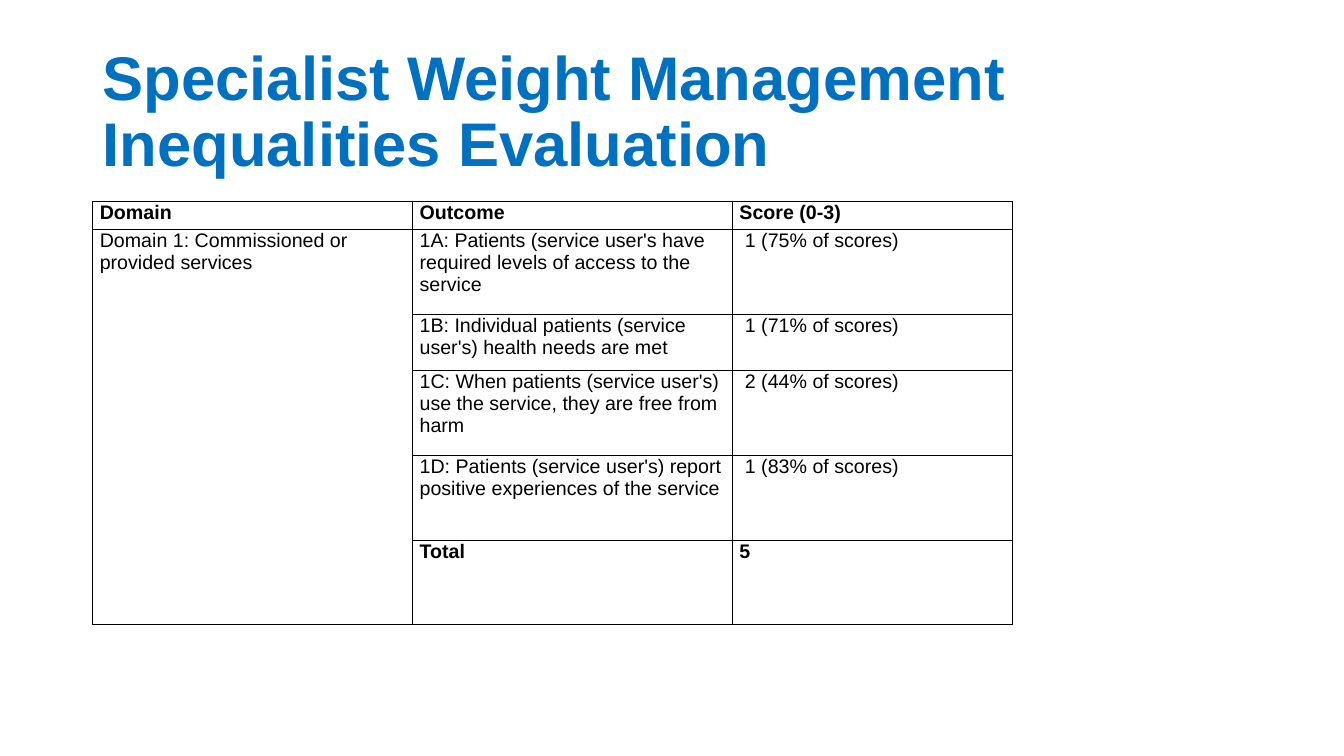
from dataclasses import dataclass

from lxml import etree
from pptx import Presentation
from pptx.dml.color import RGBColor
from pptx.enum.text import MSO_ANCHOR
from pptx.oxml.ns import qn
from pptx.util import Inches, Pt

MIDDLE = MSO_ANCHOR.MIDDLE
FONT = "Arial"
BLUE, BLACK = "0070C0", "000000"

# Grid: the table spans 23 columns and 15 rows
SLIDE_WIDTH, SLIDE_HEIGHT = 13.33, 7.5
LEFT = 0.92
TABLE_TOP = 2.0
COLUMN, ROW = 9.12 / 23, 0.28
COLUMN_SPANS = (8, 8, 7)


@dataclass
class TableRow:
    texts: tuple[str, str, str]
    row_span: int = 3
    bold: bool = False


ROWS = (
    TableRow(("Domain", "Outcome", "Score (0-3)"), row_span=1, bold=True),
    TableRow((
        "Domain 1: Commissioned or provided services",
        "1A: Patients (service user's have required levels of access to the service",
        " 1 (75% of scores)",
    )),
    TableRow((
        "",
        "1B: Individual patients (service user's) health needs are met",
        " 1 (71% of scores)",
    ), row_span=2),
    TableRow((
        "",
        "1C: When patients (service user's) use the service, they are free from harm",
        " 2 (44% of scores)",
    )),
    TableRow((
        "",
        "1D: Patients (service user's) report positive experiences of the service",
        " 1 (83% of scores)",
    )),
    TableRow(("", "Total", "5"), bold=True),
)


def color(value: str) -> RGBColor:
    return RGBColor.from_string(value)


def format_text(frame, size: float, fill: str, bold: bool) -> None:
    for para in frame.paragraphs:
        para.font.size = Pt(size)
        for span in para.runs:
            span.font.name = FONT
            span.font.size = Pt(size)
            span.font.bold = bold
            span.font.color.rgb = color(fill)


def add_title(page, text: str) -> None:
    box = page.shapes.add_textbox(Inches(LEFT), Inches(0.4), Inches(11.5), Inches(1.45))
    frame = box.text_frame
    frame.word_wrap = True
    frame.vertical_anchor = MIDDLE
    frame.text = text
    frame.paragraphs[0].line_spacing = 0.9
    format_text(frame, 44, BLUE, bold=True)


def add_borders(cell, fill: str, width: float) -> None:
    properties = cell._tc.get_or_add_tcPr()
    for side in ("a:lnL", "a:lnR", "a:lnT", "a:lnB"):
        line = etree.SubElement(properties, qn(side), w=str(Pt(width)))
        solid = etree.SubElement(line, qn("a:solidFill"))
        etree.SubElement(solid, qn("a:srgbClr"), val=fill)


def fill_cell(cell, text: str, bold: bool) -> None:
    cell.margin_left = cell.margin_right = Inches(0.07)
    cell.margin_top = cell.margin_bottom = 0
    cell.text_frame.text = text
    format_text(cell.text_frame, 14, BLACK, bold)
    add_borders(cell, BLACK, 1)
    cell.fill.background()


def add_score_table(page, rows: tuple[TableRow, ...]) -> None:
    width = COLUMN * sum(COLUMN_SPANS)
    height = ROW * sum(row.row_span for row in rows)
    table = page.shapes.add_table(
        len(rows), len(COLUMN_SPANS),
        Inches(LEFT), Inches(TABLE_TOP), Inches(width), Inches(height),
    ).table
    table.first_row = table.horz_banding = False
    for column, column_span in zip(table.columns, COLUMN_SPANS):
        column.width = Inches(COLUMN * column_span)
    for row_index, row in enumerate(rows):
        table.rows[row_index].height = Inches(ROW * row.row_span)
        for column_index, text in enumerate(row.texts):
            fill_cell(table.cell(row_index, column_index), text, row.bold)
    # One domain covers every row below the header
    table.cell(1, 0).merge(table.cell(len(rows) - 1, 0))


def main() -> None:
    deck = Presentation()
    deck.slide_width, deck.slide_height = Inches(SLIDE_WIDTH), Inches(SLIDE_HEIGHT)
    page = deck.slides.add_slide(deck.slide_layouts[6])
    add_title(page, "Specialist Weight Management\vInequalities Evaluation")
    add_score_table(page, ROWS)
    deck.save("out.pptx")


if __name__ == "__main__":
    main()
